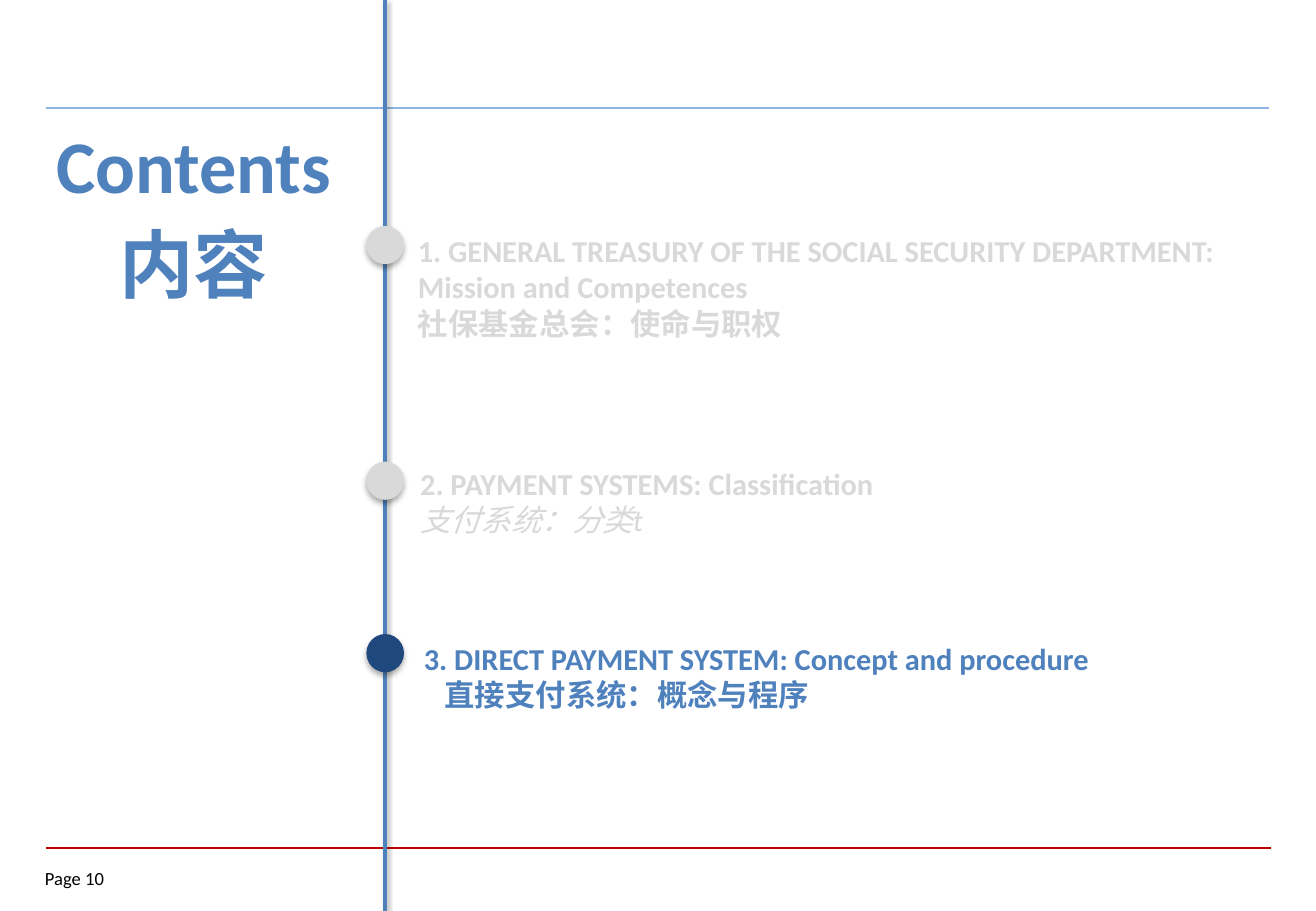
from lxml.etree import SubElement as Sub
from pptx import Presentation
from pptx.dml.color import RGBColor as Rgb
from pptx.enum.shapes import MSO_CONNECTOR as Link, MSO_SHAPE as Form
from pptx.enum.text import MSO_AUTO_SIZE as Fit, PP_ALIGN as Align
from pptx.oxml.ns import qn
from pptx.util import Inches, Pt

theme = {
    "font": "Calibri",
    "blue": Rgb(0x4F, 0x81, 0xBD), "navy": Rgb(0x1F, 0x49, 0x7D),
    "pale": Rgb(0x8E, 0xB4, 0xE3), "red": Rgb(0xC0, 0x00, 0x00),
    "gray": Rgb(0xD9, 0xD9, 0xD9), "black": Rgb(0x00, 0x00, 0x00),
    "title": Pt(44), "item": Pt(18), "page": Pt(11),
}

deck = Presentation()
deck.slide_width, deck.slide_height = Inches(10.83), Inches(7.5)
slide = deck.slides.add_slide(deck.slide_layouts[6])
shapes = slide.shapes


def place(*box):
    """Turn percent of slide width and height into lengths."""
    sides = (deck.slide_width, deck.slide_height) * 2
    return [round(side * part / 100) for side, part in zip(sides, box)]


def shade(shape, blur=0, drop=0, alpha=0):
    """Give a shape a downward shadow, or none without blur."""
    props = shape._element.spPr
    for old in props.findall(qn("a:effectLst")):
        props.remove(old)
    effect = Sub(props, qn("a:effectLst"))
    if blur:
        cast = Sub(effect, qn("a:outerShdw"), blurRad=str(Pt(blur)),
                   dist=str(Pt(drop)), dir="5400000", rotWithShape="0")
        tint = Sub(cast, qn("a:srgbClr"), val="000000")
        Sub(tint, qn("a:alpha"), val=str(alpha * 1000))


# Rules across the page and the upright rail
rail = 29.27
for ends, color, width, cast in (
    ((3.51, 93.07, 96.58, 93.07), "red", 1, ()),
    ((3.51, 11.87, 96.4, 11.87), "pale", 1.5, ()),
    ((rail, 0, rail, 100), "blue", 2, (3.1, 1.6, 38)),
):
    rule = shapes.add_connector(Link.STRAIGHT, *place(*ends))
    rule.line.color.rgb = theme[color]
    rule.line.width = Pt(width)
    shade(rule, *cast)

# Dots centred on the rail
wide, high = 2.86, 4.2
for top, color in ((24.8, "gray"), (50.67, "gray"), (69.6, "navy")):
    dot = shapes.add_shape(Form.OVAL, *place(rail - wide / 2, top, wide, high))
    dot.fill.solid()
    dot.fill.fore_color.rgb = theme[color]
    dot.line.fill.background()
    shade(dot, 3.5, 2.2, 32)

# Text: box, size, colour, then lines with their own formats
bold, slant = {"bold": True}, {"italic": True}
mid = {"alignment": Align.CENTER}
texts = (
    ((3.42, 95.2, 6.74, 2.93), "page", "black", (("Page 10", {}, {}),)),
    ((0.65, 12.4, 28.16, 22.27), "title", "blue", (
        ("Contents", bold, mid),
        ("内容", bold, {**mid, "space_before": Pt(6)}))),
    ((30.84, 24.8, 64.91, 17.47), "item", "gray", (
        ("1. GENERAL TREASURY OF THE SOCIAL SECURITY DEPARTMENT: "
         "Mission and Competences", bold, {}),
        ("社保基金总会：使命与职权", bold, {}))),
    ((31.02, 50.4, 60.39, 13.47), "item", "gray", (
        ("2. PAYMENT SYSTEMS: Classification", bold, {}),
        ("支付系统：分类t", slant, {}))),
    ((31.3, 69.6, 64.45, 9.47), "item", "blue", (
        ("3. DIRECT PAYMENT SYSTEM: Concept and procedure", bold, {}),
        ("直接支付系统：概念与程序", bold, {"indent": Inches(0.17)}))),
)
for box, size, color, lines in texts:
    frame = shapes.add_textbox(*place(*box)).text_frame
    frame.word_wrap = True
    frame.auto_size = Fit.NONE
    if size == "page":
        for side in ("left", "top", "right", "bottom"):
            setattr(frame, "margin_" + side, 0)
    for row, (words, style, layout) in enumerate(lines):
        para = frame.add_paragraph() if row else frame.paragraphs[0]
        for key, value in layout.items():
            if key == "indent":
                para._p.get_or_add_pPr().set("marL", str(value))
            else:
                setattr(para, key, value)
        run = para.add_run()
        run.text = words
        look = {"name": theme["font"], "size": theme[size], **style}
        for key, value in look.items():
            setattr(run.font, key, value)
        run.font.color.rgb = theme[color]

deck.save("out.pptx")
